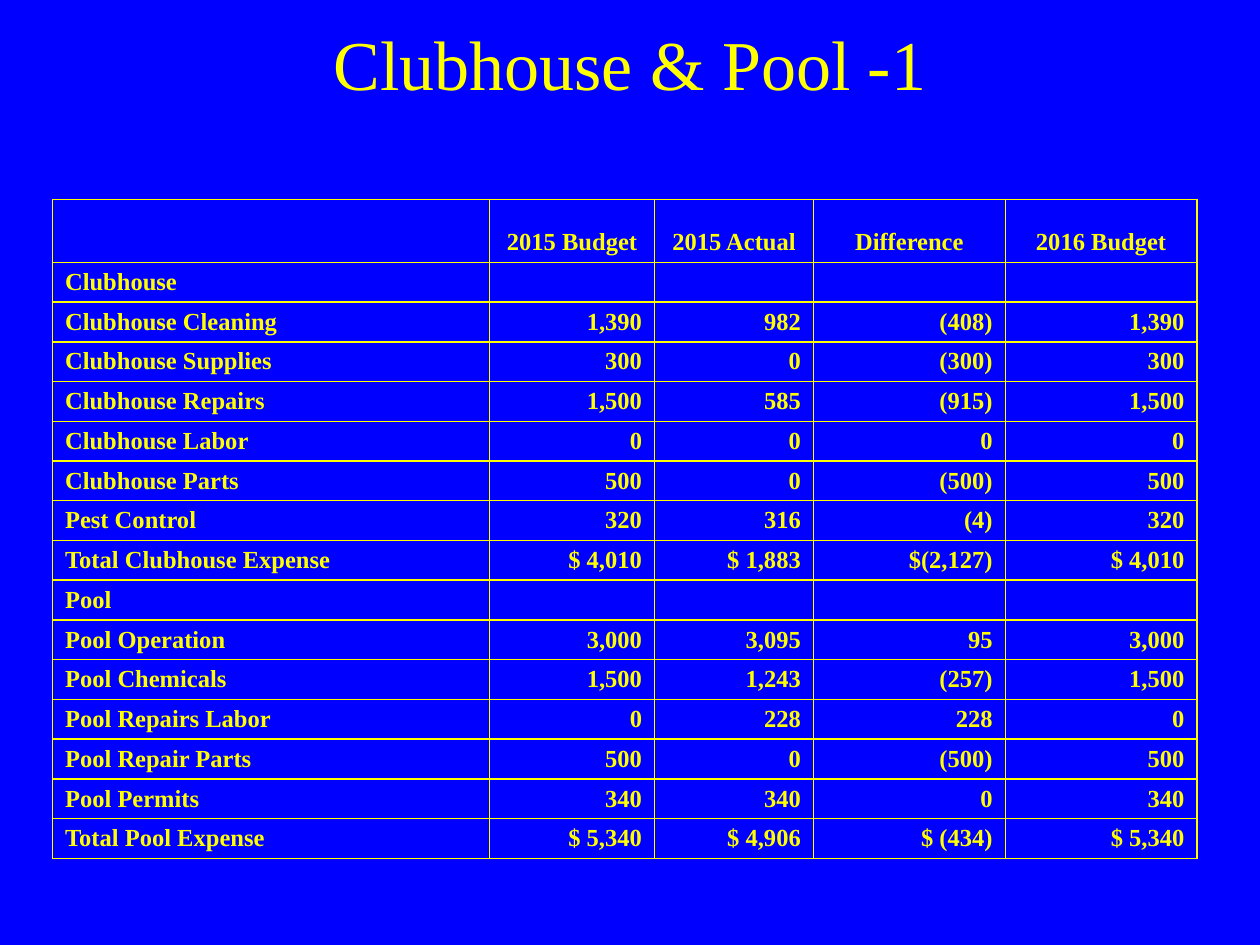
import pptx
import pptx.dml.color
import pptx.enum.text
import pptx.oxml.ns
import pptx.util
from lxml import etree

Pt = pptx.util.Pt
RGB = pptx.dml.color.RGBColor.from_string
qn = pptx.oxml.ns.qn
ALIGN = pptx.enum.text.PP_ALIGN
ANCHOR = pptx.enum.text.MSO_ANCHOR

COLORS = {"background": "0000FF", "text": "FFFF00", "border": "FFFF00"}
FONT = "Times New Roman"


def write(tf, text, size, align, bold=False, hang=0):
    p = tf.paragraphs[0]
    p.alignment = align
    if hang:
        pPr = p._p.get_or_add_pPr()
        pPr.set("marL", str(Pt(hang)))
        pPr.set("indent", str(-Pt(hang)))
    if not text:
        # An empty cell still needs its font size to keep the row height
        etree.SubElement(p._p, qn("a:endParaRPr"), sz=str(size * 100))
        return
    r = p.add_run()
    r.text = text
    r.font.name = FONT
    r.font.size = Pt(size)
    r.font.bold = bold
    r.font.color.rgb = RGB(COLORS["text"])


def add_borders(cell, width):
    tcPr = cell._tc.get_or_add_tcPr()
    for side in ("a:lnL", "a:lnR", "a:lnT", "a:lnB"):
        ln = etree.SubElement(tcPr, qn(side), w=str(Pt(width)))
        fill = etree.SubElement(ln, qn("a:solidFill"))
        etree.SubElement(fill, qn("a:srgbClr"), val=COLORS["border"])


prs = pptx.Presentation()
prs.slide_width, prs.slide_height = Pt(720), Pt(540)
s = prs.slides.add_slide(prs.slide_layouts[6])
s.background.fill.solid()
s.background.fill.fore_color.rgb = RGB(COLORS["background"])

# Title
sp = s.shapes.add_textbox(Pt(54), Pt(12), Pt(612), Pt(48))
tf = sp.text_frame
tf.word_wrap = True
tf.vertical_anchor = ANCHOR.MIDDLE
write(tf, "Clubhouse & Pool -1", size=40, align=ALIGN.CENTER)

# Budget table
rows = [
    ["", "2015 Budget", "2015 Actual", "Difference", "2016 Budget"],
    ["Clubhouse", "", "", "", ""],
    ["Clubhouse Cleaning", "1,390", "982", "(408)", "1,390"],
    ["Clubhouse Supplies", "300", "0", "(300)", "300"],
    ["Clubhouse Repairs", "1,500", "585", "(915)", "1,500"],
    ["Clubhouse Labor", "0", "0", "0", "0"],
    ["Clubhouse Parts", "500", "0", "(500)", "500"],
    ["Pest Control", "320", "316", "(4)", "320"],
    ["Total Clubhouse Expense", "$ 4,010", "$ 1,883", "$(2,127)", "$ 4,010"],
    ["Pool", "", "", "", ""],
    ["Pool Operation", "3,000", "3,095", "95", "3,000"],
    ["Pool Chemicals", "1,500", "1,243", "(257)", "1,500"],
    ["Pool Repairs Labor", "0", "228", "228", "0"],
    ["Pool Repair Parts", "500", "0", "(500)", "500"],
    ["Pool Permits", "340", "340", "0", "340"],
    ["Total Pool Expense", "$ 5,340", "$ 4,906", "$ (434)", "$ 5,340"],
]
col_widths = [249.8, 94.3, 90.8, 109.6, 109.6]
header_height, row_height = 36, 22.72

table = s.shapes.add_table(
    len(rows), len(col_widths), Pt(30), Pt(113.9), Pt(sum(col_widths)),
    Pt(header_height + row_height * (len(rows) - 1))).table
table.first_row = table.horz_banding = False
for column, width in zip(table.columns, col_widths):
    column.width = Pt(width)

for i, values in enumerate(rows):
    table.rows[i].height = Pt(row_height if i else header_height)
    for j, value in enumerate(values):
        cell = table.cell(i, j)
        cell.vertical_anchor = ANCHOR.BOTTOM
        cell.margin_top, cell.margin_bottom = Pt(2), Pt(3.6)
        add_borders(cell, width=1)
        cell.fill.background()
        if j == 0:
            align = ALIGN.LEFT
        else:
            align = ALIGN.RIGHT if i else ALIGN.CENTER
        write(cell.text_frame, value, size=14, align=align, bold=True, hang=27)

prs.save("out.pptx")
